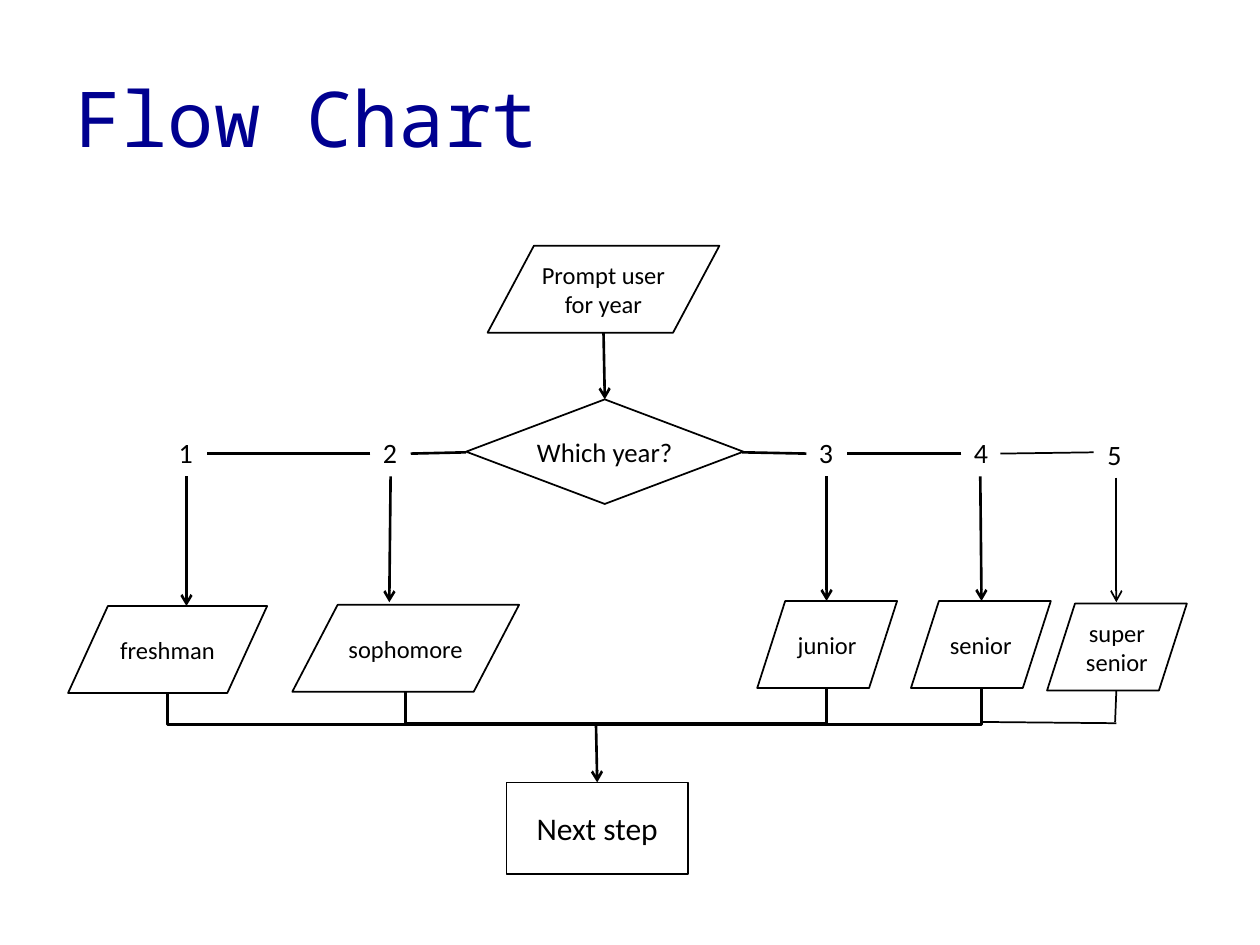
import pptx
import pptx.dml.color
import pptx.enum.shapes
import pptx.enum.text
import pptx.oxml.ns
import pptx.util
from lxml import etree

PX = 9144
BLACK = pptx.dml.color.RGBColor(0, 0, 0)
NAVY = pptx.dml.color.RGBColor(0, 0, 0x90)
KIND = pptx.enum.shapes.MSO_SHAPE
LINK = pptx.enum.shapes.MSO_CONNECTOR
ALIGN = pptx.enum.text.PP_ALIGN
MIDDLE = pptx.enum.text.MSO_ANCHOR.MIDDLE


def scale(*sizes):
    return [pptx.util.Emu(round(size * PX)) for size in sizes]


def style(frame, text, size, align, font="Calibri", color=BLACK):
    frame.text = text
    para = frame.paragraphs[0]
    para.alignment = align
    face = para.runs[0].font
    face.name, face.size = font, pptx.util.Pt(size)
    face.color.rgb = color


def add_title(slide, text):
    title = slide.shapes.title
    title.left, title.top, title.width, title.height = scale(50, 30, 900, 125)
    title.text_frame.vertical_anchor = MIDDLE
    style(title.text_frame, text, 44, ALIGN.LEFT, "Noto Sans Mono", NAVY)


def add_node(slide, kind, box, text, size=14):
    node = slide.shapes.add_shape(kind, *scale(*box))
    node.shadow.inherit = False
    node.fill.background()
    node.line.color.rgb = BLACK
    node.line.width = pptx.util.Pt(1)
    frame = node.text_frame
    frame.word_wrap = True
    frame.margin_left = frame.margin_right = 0
    frame.vertical_anchor = MIDDLE
    style(frame, text, size, ALIGN.CENTER)


def add_label(slide, left, top, text):
    label = slide.shapes.add_textbox(*scale(left, top, 32, 37))
    label.text_frame.word_wrap = False
    label.text_frame.auto_size = pptx.enum.text.MSO_AUTO_SIZE.SHAPE_TO_FIT_TEXT
    style(label.text_frame, text, 16, ALIGN.LEFT)


def add_line(slide, ends, width=1.5, arrow=False, kind=LINK.STRAIGHT):
    line = slide.shapes.add_connector(kind, *scale(*ends))
    line.line.color.rgb = BLACK
    line.line.width = pptx.util.Pt(width)
    props = line._element.spPr
    etree.SubElement(props, pptx.oxml.ns.qn("a:effectLst"))
    if arrow:
        stroke = line.line._get_or_add_ln()
        etree.SubElement(stroke, pptx.oxml.ns.qn("a:tailEnd"), type="arrow")
    return props


def add_bend(slide, start, end, low):
    (left, top), (right, rise) = start, end
    mid_x, mid_y = (left + right) / 2, (top + rise) / 2
    wide, high = (top - rise) / 2, (right - left) / 2
    ends = mid_x + wide, mid_y + high, mid_x - wide, mid_y - high
    props = add_line(slide, ends, kind=LINK.ELBOW)
    props.find(pptx.oxml.ns.qn("a:xfrm")).set("rot", "5400000")
    guides = props.find(pptx.oxml.ns.qn("a:prstGeom")).get_or_add_avLst()
    ratio = round((top - low) / (top - rise) * 100000)
    etree.SubElement(guides, pptx.oxml.ns.qn("a:gd"), name="adj1", fmla=f"val {ratio}")


def main():
    deck = pptx.Presentation()
    deck.slide_width, deck.slide_height = scale(1000, 750)
    slide = deck.slides.add_slide(deck.slide_layouts[5])
    add_title(slide, "Flow Chart")

    add_node(slide, KIND.FLOWCHART_DATA, (387, 195, 184, 69), "Prompt user for year")
    add_node(slide, KIND.FLOWCHART_DECISION, (370, 317, 220, 83), "Which year?", 15.3)
    add_node(slide, KIND.FLOWCHART_PROCESS, (402, 621, 144, 73), "Next step", 18)

    years = [
        ("1", 132, 341, "freshman", (54, 481, 158), (148, 378, 148, 481), 1.5),
        ("2", 294, 341, "sophomore", (232, 480, 180), (310, 378, 309, 478), 1.5),
        ("3", 640, 341, "junior", (601, 477, 111), (656, 378, 656, 477), 1.5),
        ("4", 763, 341, "senior", (723, 477, 111), (778, 378, 779, 477), 1.5),
        ("5", 869, 342, "super senior", (831, 479, 111), (886, 379, 886, 478), 1),
    ]
    for digit, left, top, name, box, drop, width in years:
        add_label(slide, left, top, digit)
        add_node(slide, KIND.FLOWCHART_DATA, (*box, 69), name)
        add_line(slide, drop, width, arrow=True)

    for ends in ((479, 264, 480, 317), (473, 574, 474, 621)):
        add_line(slide, ends, arrow=True)
    for ends in (
        (370, 359, 326, 360),
        (294, 360, 164, 360),
        (640, 360, 589, 359),
        (763, 360, 672, 360),
    ):
        add_line(slide, ends)
    for ends in ((794, 360, 868, 359), (886, 548, 885, 573), (780, 573, 886, 574)):
        add_line(slide, ends, 1)

    add_bend(slide, (133, 550), (779, 546), 575)
    add_bend(slide, (322, 549), (656, 546), 574)
    deck.save("out.pptx")


if __name__ == "__main__":
    main()
